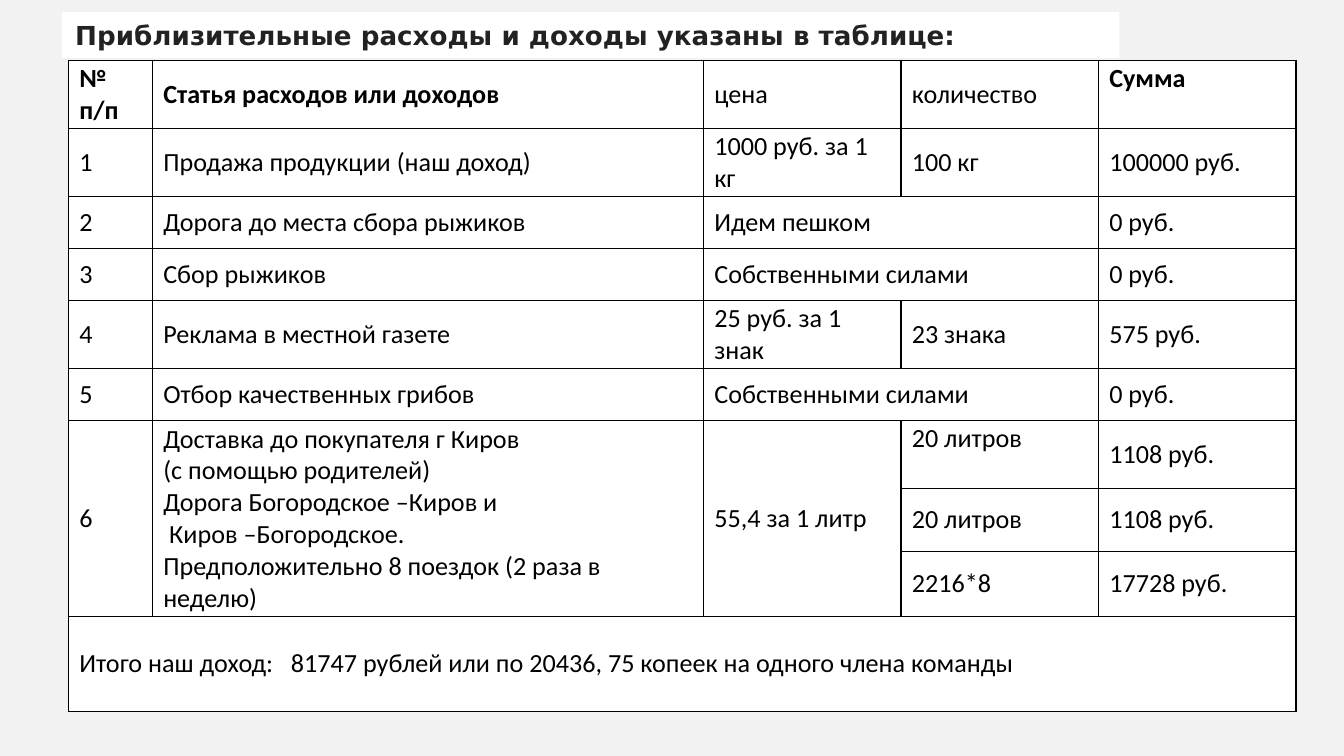
from dataclasses import dataclass

from lxml.etree import SubElement
from pptx import Presentation
from pptx.dml.color import RGBColor
from pptx.enum.text import MSO_ANCHOR, PP_ALIGN
from pptx.oxml.ns import qn
from pptx.util import Pt

BLACK = "000000"
WHITE = "FFFFFF"
COLUMN_WIDTHS = [45, 295.2, 105.8, 105.8, 105.8]
ROW_HEIGHTS = [36.4, 36.4, 27.9, 27.9, 36.4, 27.9, 36.4, 33.5, 34.9, 50.9]


@dataclass
class Entry:
    row: int
    column: int
    text: str
    rows: int = 1
    columns: int = 1
    bold: bool = False
    anchor: MSO_ANCHOR = MSO_ANCHOR.MIDDLE


DELIVERY = "\n".join([
    "Доставка до покупателя г Киров",
    "(с помощью родителей)",
    "Дорога Богородское –Киров и",
    " Киров –Богородское.",
    "Предположительно 8 поездок (2 раза в неделю)",
])
TOTAL = "Итого наш доход:   81747 рублей или по 20436, 75 копеек на одного члена команды"

ENTRIES = [
    Entry(0, 0, "№ п/п", bold=True),
    Entry(0, 1, "Статья расходов или доходов", bold=True),
    Entry(0, 2, "цена"),
    Entry(0, 3, "количество"),
    Entry(0, 4, "Сумма", bold=True, anchor=MSO_ANCHOR.TOP),
    Entry(1, 0, "1"),
    Entry(1, 1, "Продажа продукции (наш доход)"),
    Entry(1, 2, "1000 руб. за 1 кг"),
    Entry(1, 3, "100 кг"),
    Entry(1, 4, "100000 руб."),
    Entry(2, 0, "2"),
    Entry(2, 1, "Дорога до места сбора рыжиков"),
    Entry(2, 2, "Идем пешком", columns=2),
    Entry(2, 4, "0 руб."),
    Entry(3, 0, "3"),
    Entry(3, 1, "Сбор рыжиков"),
    Entry(3, 2, "Собственными силами", columns=2),
    Entry(3, 4, "0 руб."),
    Entry(4, 0, "4"),
    Entry(4, 1, "Реклама в местной газете"),
    Entry(4, 2, "25 руб. за 1 знак"),
    Entry(4, 3, "23 знака"),
    Entry(4, 4, "575 руб."),
    Entry(5, 0, "5"),
    Entry(5, 1, "Отбор качественных грибов"),
    Entry(5, 2, "Собственными силами", columns=2),
    Entry(5, 4, "0 руб."),
    Entry(6, 0, "6", rows=3),
    Entry(6, 1, DELIVERY, rows=3),
    Entry(6, 2, "55,4 за 1 литр", rows=3),
    Entry(6, 3, "20 литров", anchor=MSO_ANCHOR.TOP),
    Entry(6, 4, "1108 руб."),
    Entry(7, 3, "20 литров"),
    Entry(7, 4, "1108 руб."),
    Entry(8, 3, "2216*8"),
    Entry(8, 4, "17728 руб."),
    Entry(9, 0, TOTAL, columns=5),
]


def paint(fill, color: str) -> None:
    fill.solid()
    fill.fore_color.rgb = RGBColor.from_string(color)


def format_text(frame, font: str, color: str, bold: bool) -> None:
    for paragraph in frame.paragraphs:
        paragraph.alignment = PP_ALIGN.LEFT
        for span in paragraph.runs:
            span.font.name = font
            span.font.size = Pt(14)
            span.font.bold = bold
            paint(span.font.fill, color)


def add_borders(cell) -> None:
    properties = cell._tc.get_or_add_tcPr()
    for position, side in enumerate(["a:lnL", "a:lnR", "a:lnT", "a:lnB"]):
        line = SubElement(properties, qn(side), w=str(Pt(0.75)))
        color = SubElement(SubElement(line, qn("a:solidFill")), qn("a:srgbClr"))
        color.set("val", BLACK)
        properties.insert(position, line)


def fill_cell(table, entry: Entry) -> None:
    cell = table.cell(entry.row, entry.column)
    if entry.rows > 1 or entry.columns > 1:
        cell.merge(table.cell(entry.row + entry.rows - 1, entry.column + entry.columns - 1))
    cell.text_frame.text = entry.text
    cell.vertical_anchor = entry.anchor
    format_text(cell.text_frame, "Calibri", BLACK, entry.bold)


def add_budget_table(page) -> None:
    frame = page.shapes.add_table(
        len(ROW_HEIGHTS), len(COLUMN_WIDTHS), Pt(36.7), Pt(32.3),
        Pt(sum(COLUMN_WIDTHS)), Pt(sum(ROW_HEIGHTS)))
    table = frame.table
    table.first_row = False
    table.horz_banding = False
    for column, width in zip(table.columns, COLUMN_WIDTHS):
        column.width = Pt(width)
    for row, height in zip(table.rows, ROW_HEIGHTS):
        row.height = Pt(height)
    for cell in table.iter_cells():
        cell.margin_left = cell.margin_right = Pt(5.8)
        cell.margin_top = cell.margin_bottom = Pt(1.2)
        paint(cell.fill, WHITE)
        add_borders(cell)
    for entry in ENTRIES:
        fill_cell(table, entry)


def add_title(page) -> None:
    title = page.shapes.title
    title.left, title.top, title.width, title.height = Pt(33.1), Pt(6.5), Pt(566.6), Pt(24.5)
    paint(title.fill, WHITE)
    frame = title.text_frame
    frame.text = "Приблизительные расходы и доходы указаны в таблице:"
    frame.word_wrap = True
    frame.vertical_anchor = MSO_ANCHOR.MIDDLE
    format_text(frame, "DejaVu Sans", "222222", True)


def main() -> None:
    deck = Presentation()
    deck.slide_width, deck.slide_height = Pt(720), Pt(405)
    page = deck.slides.add_slide(deck.slide_layouts[5])
    paint(page.background.fill, "F2F2F2")
    add_title(page)
    add_budget_table(page)
    deck.save("out.pptx")


if __name__ == "__main__":
    main()
